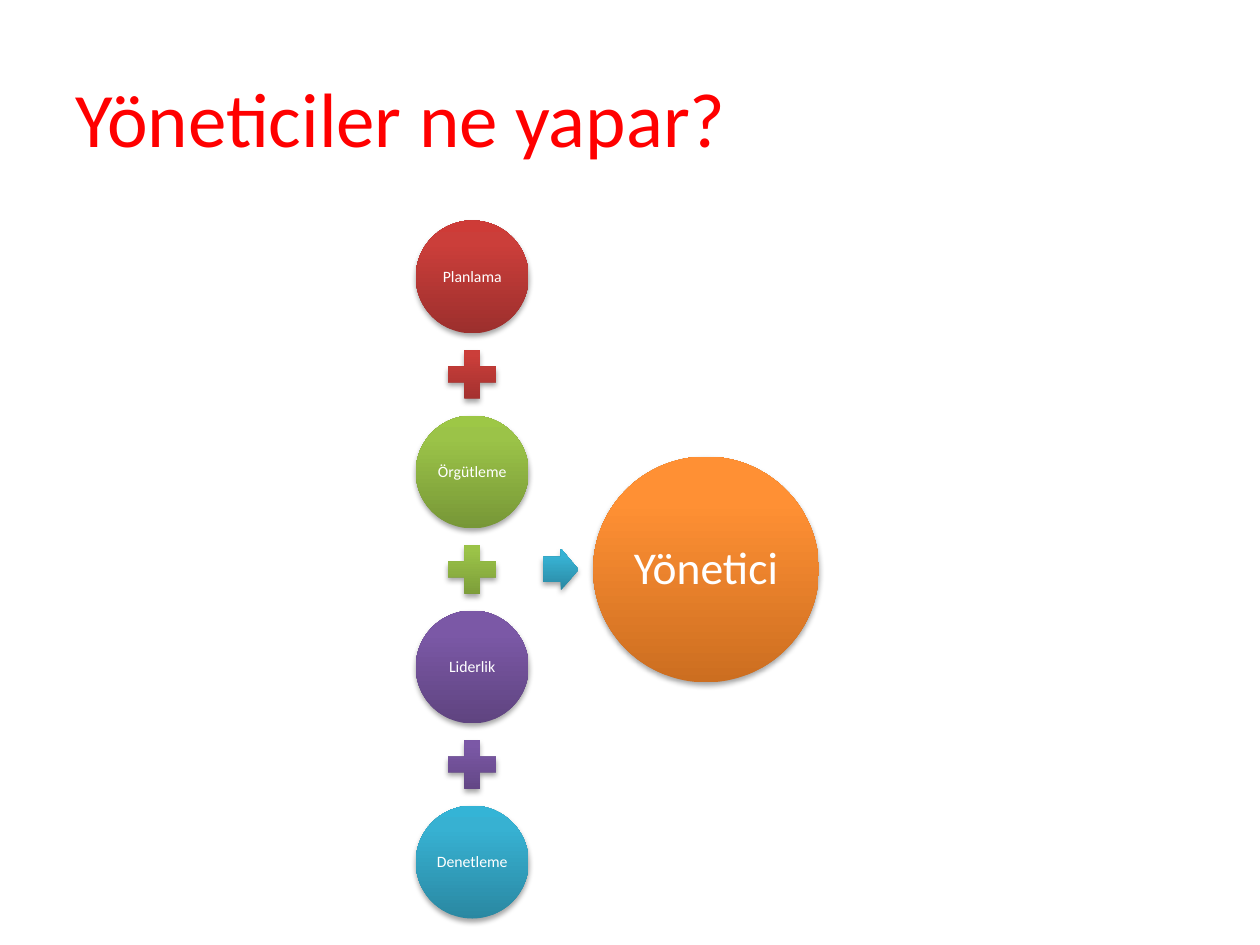
from dataclasses import dataclass

from lxml import etree
from pptx import Presentation
from pptx.dml.color import RGBColor
from pptx.enum.shapes import MSO_SHAPE
from pptx.enum.text import MSO_ANCHOR, PP_ALIGN
from pptx.oxml.ns import qn
from pptx.util import Inches, Pt

CIRCLE, PLUS, ARROW = MSO_SHAPE.OVAL, MSO_SHAPE.MATH_PLUS, MSO_SHAPE.RIGHT_ARROW
MIDDLE = MSO_ANCHOR.MIDDLE
LEFT, CENTER = PP_ALIGN.LEFT, PP_ALIGN.CENTER


@dataclass(frozen=True)
class Theme:
    """Colours, font and type sizes of the slide."""
    font: str = "Calibri"
    title: str = "FF0000"
    label: str = "FFFFFF"
    red: tuple = ("9C2F2D", "CB3E3A", "CE3B37")
    green: tuple = ("779737", "9BC348", "9DC746")
    purple: tuple = ("5F4480", "7B58A6", "7C57A8")
    blue: tuple = ("2A88A2", "37B1D2", "34B4D6")
    orange: tuple = ("CC6E20", "FF9034", "FF9136")
    title_size: int = 44
    result_size: int = 26
    step_size: int = 9


THEME = Theme()
STEPS = [
    ("Planlama", THEME.red),
    ("Örgütleme", THEME.green),
    ("Liderlik", THEME.purple),
    ("Denetleme", THEME.blue),
]


def write(sp, text, size, color, align=CENTER, inset=0.01, spacing=0.9):
    """Write one formatted paragraph into a shape."""
    tf = sp.text_frame
    tf.word_wrap = True
    tf.vertical_anchor = MIDDLE
    tf.margin_left = tf.margin_right = Inches(inset)
    tf.margin_top = tf.margin_bottom = Inches(inset)
    p = tf.paragraphs[0]
    p.alignment = align
    p.line_spacing = spacing
    r = p.add_run()
    r.text = text
    r.font.name = THEME.font
    r.font.size = Pt(size)
    r.font.color.rgb = RGBColor.from_string(color)


def add_color(parent, color):
    """Append an RGB colour element and return it."""
    return etree.SubElement(parent, qn("a:srgbClr"), val=color)


def add_glossy(s, kind, cx, cy, w, h, colors):
    """Add a centred shape with an upward gradient and a soft shadow."""
    sp = s.shapes.add_shape(kind, Inches(cx - w / 2), Inches(cy - h / 2), Inches(w), Inches(h))
    sp.line.fill.background()
    sp.fill.gradient()
    sp.fill.gradient_angle = 90
    sp.shadow.inherit = False
    props = sp._element.spPr
    stops = props.find(qn("a:gradFill")).find(qn("a:gsLst"))
    stops.clear()
    for share, color in zip((0, 80, 100), colors):
        add_color(etree.SubElement(stops, qn("a:gs"), pos=str(share * 1000)), color)
    shadow = etree.SubElement(
        props.find(qn("a:effectLst")), qn("a:outerShdw"), blurRad=str(Pt(3.1)),
        dist=str(Pt(1.8)), dir="5400000", rotWithShape="0")
    etree.SubElement(add_color(shadow, "000000"), qn("a:alpha"), val="35000")
    return sp


def add_title(s, x, y, w, h):
    """Place the slide title in its box."""
    sp = s.shapes.add_textbox(Inches(x), Inches(y), Inches(w), Inches(h))
    write(sp, "Yöneticiler ne yapar?", THEME.title_size, THEME.title,
          align=LEFT, inset=0.1, spacing=1)


def add_chain(s, x, y, w, h):
    """Stack the step circles in a column with a plus between neighbours."""
    cx, pitch, plus = x + w / 2, (h - w) / (len(STEPS) - 1), 0.58 * w
    for i, (name, colors) in enumerate(STEPS):
        cy = y + w / 2 + i * pitch
        write(add_glossy(s, CIRCLE, cx, cy, w, w, colors), name, THEME.step_size, THEME.label)
        if i < len(STEPS) - 1:
            add_glossy(s, PLUS, cx, cy + pitch / 2, plus, plus, colors)


def add_equation(s, x, y, w, h):
    """Place the chain of steps, the arrow and the resulting circle."""
    step, result, cy = 0.28 * w, 0.56 * w, y + h / 2
    add_chain(s, x, y, step, h)
    arrow = add_glossy(s, ARROW, x + 0.36 * w, cy, 0.28, 0.33, THEME.blue)
    arrow.adjustments[0] = 0.6
    sp = add_glossy(s, CIRCLE, x + w - result / 2, cy, result, result, THEME.orange)
    write(sp, "Yönetici", THEME.result_size, THEME.label, inset=0.04)


def main():
    """Build and save the slide."""
    prs = Presentation()
    prs.slide_width, prs.slide_height = Inches(10), Inches(7.5)
    s = prs.slides.add_slide(prs.slide_layouts[6])
    add_title(s, 0.5, 0.3, 9, 1.25)
    add_equation(s, 3.3, 1.75, 3.2, 5.54)
    prs.save("out.pptx")


if __name__ == "__main__":
    main()
